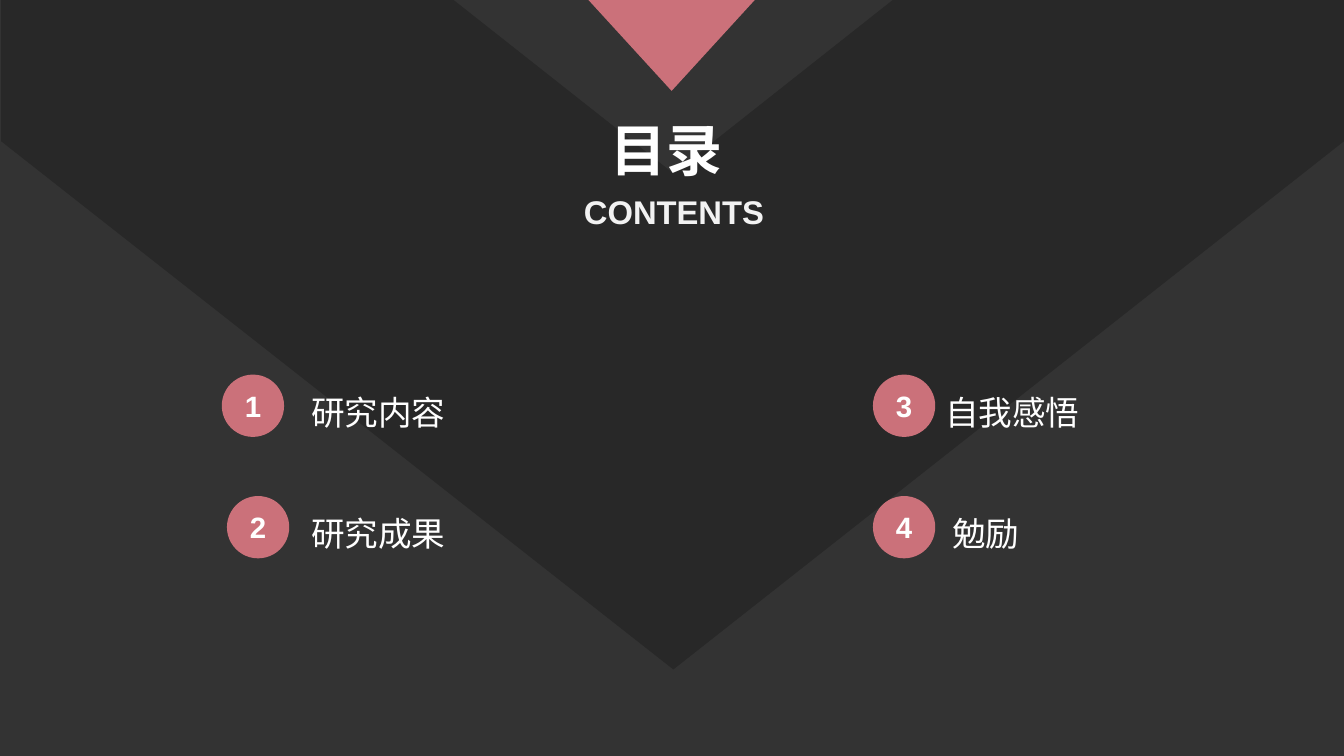
from pptx import Presentation
from pptx import util as u
from pptx.dml.color import RGBColor
from pptx.enum import shapes, text

HUES = {"back": "333333", "vee": "282828", "rose": "CB717A", "white": "FFFFFF", "pale": "F2F2F2"}


def paint(fill, hue):
    """Give a fill one solid colour."""
    fill.solid()
    fill.fore_color.rgb = RGBColor.from_string(HUES[hue])


def style(shape, hue):
    """Make a shape flat: one colour, no line, no shadow."""
    paint(shape.fill, hue)
    shape.line.fill.background()
    shape.shadow.inherit = False


def write(frame, words, size, hue="white", bold=False, align=text.PP_ALIGN.CENTER, lead=None):
    """Write one run in the first paragraph of a frame."""
    para = frame.paragraphs[0]
    para.alignment = align
    para.line_spacing = lead
    run = para.add_run()
    run.text = words
    run.font.name = "Arial"
    run.font.size = u.Pt(size)
    run.font.bold = bold
    paint(run.font.fill, hue)


def label(slide, box, words, size, wrap=True, anchor=text.MSO_ANCHOR.TOP, **look):
    """Add a text box at a box given in centimetres."""
    frame = slide.shapes.add_textbox(*map(u.Cm, box)).text_frame
    frame.word_wrap = wrap
    frame.vertical_anchor = anchor
    write(frame, words, size, **look)


def decor(slide, left, top, width):
    """Draw the dark chevron and the rose wedge across the given width."""
    mid, right = left + 16.97, left + width
    spots = [(left + 11.43, 0), (mid, 4.37), (left + 22.5, 0), (right, 0),
             (right, 3.56), (mid, 16.87), (left + 0.03, 3.56)]
    path = slide.shapes.build_freeform(u.Cm(left + 0.03), u.Cm(top))
    path.add_line_segments([(u.Cm(x), u.Cm(top + y)) for x, y in spots])
    style(path.convert_to_shape(), "vee")
    wedge = slide.shapes.add_shape(shapes.MSO_SHAPE.ISOSCELES_TRIANGLE, u.Cm(left + 14.83),
                                   u.Cm(top), u.Cm(4.19), u.Cm(2.29))
    wedge.rotation = 180
    style(wedge, "rose")


def header(slide, left, top):
    """Place the title with its subtitle below."""
    label(slide, (left + 0.33, top + 2.13, 5.21, 1.37), "CONTENTS", 23.4, hue="pale", bold=True)
    label(slide, (left, top, 5.51, 2.18), "目录", 40, wrap=False,
          anchor=text.MSO_ANCHOR.BOTTOM, bold=True, lead=0.9)


def entry(slide, left, top, mark, words, gap):
    """Place a numbered dot and its topic, with the given gap after the dot."""
    side = 1.57
    dot = slide.shapes.add_shape(shapes.MSO_SHAPE.OVAL, *map(u.Cm, (left, top, side, side)))
    style(dot, "rose")
    dot.text_frame.vertical_anchor = text.MSO_ANCHOR.MIDDLE
    write(dot.text_frame, mark, 21, bold=True)
    label(slide, (left + side + gap, top, 6.12, 1.17), words, 24,
          align=text.PP_ALIGN.LEFT, lead=1.3)


def agenda(slide, left, top):
    """Place the four entries in two columns of two rows."""
    items = [(0, 0, "研究内容", 0.43), (0.13, 1, "研究成果", 0.3),
             (16.41, 0, "自我感悟", 0), (16.41, 1, "勉励", 0.18)]
    for mark, (shift, row, words, gap) in enumerate(items, 1):
        entry(slide, left + shift, top + row * 3.06, str(mark), words, gap)


def main():
    """Build the contents slide and save it."""
    deck = Presentation()
    deck.slide_width, deck.slide_height = u.Cm(33.87), u.Cm(19.05)
    slide = deck.slides.add_slide(deck.slide_layouts[6])
    paint(slide.background.fill, "back")
    decor(slide, 0, 0, 33.87)
    header(slide, 14.05, 2.57)
    agenda(slide, 5.59, 9.44)
    deck.save("out.pptx")


if __name__ == "__main__":
    main()
